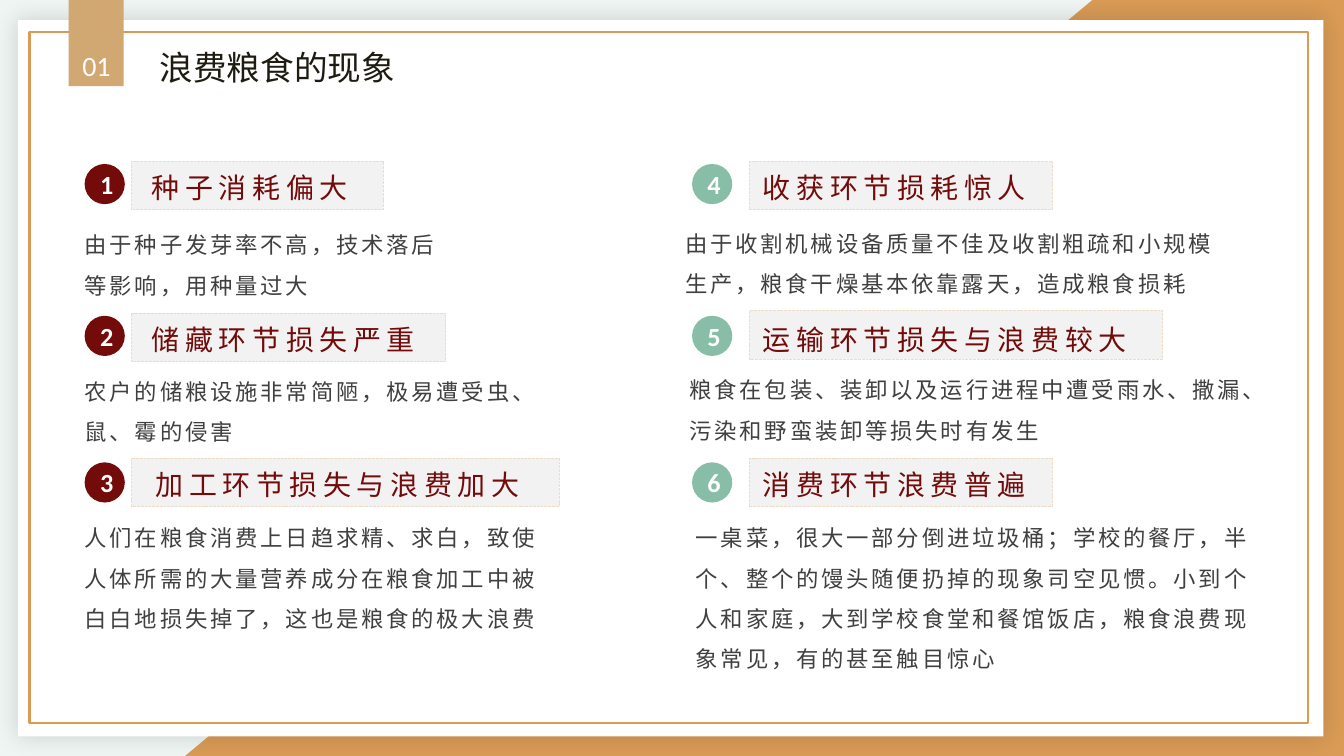
from dataclasses import dataclass

import lxml.etree
import pptx
import pptx.dml.color
import pptx.enum.dml
import pptx.enum.shapes
import pptx.enum.text
import pptx.oxml.ns
import pptx.util

Cm = pptx.util.Cm
Pt = pptx.util.Pt
Kind = pptx.enum.shapes.MSO_SHAPE
Align = pptx.enum.text.PP_ALIGN
Anchor = pptx.enum.text.MSO_ANCHOR
Fit = pptx.enum.text.MSO_AUTO_SIZE
qn = pptx.oxml.ns.qn


@dataclass(frozen=True)
class Theme:
    """Colours, fonts and type sizes."""
    mist: str = "EEF5F3"
    amber: str = "D99B55"
    sand: str = "D1A772"
    cream: str = "EDDCC7"
    white: str = "FFFFFF"
    black: str = "000000"
    pale: str = "F2F2F2"
    wine: str = "730B0B"
    sage: str = "88BEA7"
    ink: str = "1E1C11"
    grey: str = "404040"
    latin: str = "Calibri"
    asian: str = "Noto Sans CJK SC"
    title: int = 18
    head: int = 15
    badge: int = 14
    body: int = 12


@dataclass(frozen=True)
class Entry:
    """A numbered point, with boxes relative to its own corner in cm."""
    head: str
    text: str
    strip: tuple
    body: tuple
    shift: tuple = (0, 0.05)


THEME = Theme()
SLIM = (0.18, 0.1)
WIDE = (0.25, 0.13)
ROWS = (3.1, 5.97, 8.74)
COLUMNS = ((1.6, THEME.wine), (13.08, THEME.sage))
ENTRIES = (
    Entry("种子消耗偏大", "由于种子发芽率不高，技术落后等影响，用种量过大",
          (0.89, -0.05, 4.75, 0.92), (-0.25, 0.89, 7.24, 1.8), (0.13, 0.05)),
    Entry("储藏环节损失严重", "农户的储粮设施非常简陋，极易遭受虫、鼠、霉的侵害",
          (0.89, -0.05, 5.94, 0.92), (-0.25, 0.79, 9.53, 1.8), (0.13, 0.05)),
    Entry("加工环节损失与浪费加大",
          "人们在粮食消费上日趋求精、求白，致使人体所需的大量营养成分在粮食加工中被白白地损失掉了，这也是粮食的极大浪费",
          (0.89, -0.08, 8.08, 0.92), (-0.25, 0.79, 9.53, 2.57), (0.2, 0.05)),
    Entry("收获环节损耗惊人",
          "由于收割机械设备质量不佳及收割粗疏和小规模生产，粮食干燥基本依靠露天，造成粮食损耗",
          (1.09, -0.05, 5.72, 0.92), (-0.38, 0.86, 10.85, 1.8)),
    Entry("运输环节损失与浪费较大",
          "粮食在包装、装卸以及运行进程中遭受雨水、撒漏、污染和野蛮装卸等损失时有发生",
          (1.09, -0.1, 7.8, 0.92), (-0.3, 0.76, 11.23, 1.8), (0, 0.1)),
    Entry("消费环节浪费普遍",
          "一桌菜，很大一部分倒进垃圾桶；学校的餐厅，半个、整个的馒头随便扔掉的现象司空见惯。"
          "小到个人和家庭，大到学校食堂和餐馆饭店，粮食浪费现象常见，有的甚至触目惊心",
          (1.09, -0.08, 5.72, 0.92), (-0.18, 0.79, 11.3, 3.33)),
)


def tint(code):
    """Return a colour from its hex code."""
    return pptx.dml.color.RGBColor.from_string(code)


def place(box, part):
    """Shift a part by the corner of its box."""
    return (box[0] + part[0], box[1] + part[1], *part[2:])


def draw(shapes, kind, box, fill=None, line=None, width=1.25):
    """Add a preset shape without shadow."""
    shape = shapes.add_shape(kind, *map(Cm, box))
    shape.shadow.inherit = False
    if fill:
        shape.fill.solid()
        shape.fill.fore_color.rgb = tint(fill)
    else:
        shape.fill.background()
    if line:
        shape.line.color.rgb = tint(line)
        shape.line.width = Pt(width)
    else:
        shape.line.fill.background()
    return shape


def style(shape, text, size, color, font=THEME.latin, align=Align.LEFT,
          anchor=Anchor.TOP, inset=WIDE, gap=0, bold=False, wrap=True):
    """Set the text of a shape and format it."""
    frame = shape.text_frame
    frame.text = text
    frame.word_wrap = wrap
    frame.vertical_anchor = anchor
    frame.margin_left = frame.margin_right = Cm(inset[0])
    frame.margin_top = frame.margin_bottom = Cm(inset[1])
    line = frame.paragraphs[0]
    line.alignment = align
    run = line.runs[0]
    run.font.size = Pt(size)
    run.font.name = font
    run.font.bold = bold
    run.font.color.rgb = tint(color)
    props = run.font._element
    props.set("spc", str(round(gap * 100)))
    lxml.etree.SubElement(props, qn("a:ea")).set("typeface", THEME.asian)
    return frame


def write(shapes, box, *args, **kwargs):
    """Add a text box with formatted text."""
    return style(shapes.add_textbox(*map(Cm, box)), *args, **kwargs)


def glow(shape):
    """Give a shape a soft, centred shadow."""
    effects = shape._element.spPr.find(qn("a:effectLst"))
    outer = lxml.etree.SubElement(effects, qn("a:outerShdw"), blurRad=str(Pt(12)),
                                  dist="0", dir="0", algn="ctr", rotWithShape="0")
    color = lxml.etree.SubElement(outer, qn("a:srgbClr"), val=THEME.black)
    lxml.etree.SubElement(color, qn("a:alpha"), val="15000")


def backdrop(slide, box):
    """Draw the ground, the corner and the framed card."""
    wide, high = box[2:]
    draw(slide.shapes, Kind.RECTANGLE, box, THEME.mist)
    wedge = draw(slide.shapes, Kind.RIGHT_TRIANGLE,
                 place(box, (3.5, -3.96, wide - 3.5, high + 3.96)), THEME.amber)
    wedge._element.spPr.find(qn("a:xfrm")).set("flipH", "1")
    group = slide.shapes.add_group_shape().shapes
    glow(draw(group, Kind.RECTANGLE, place(box, (0.34, 0.38, 24.67, 13.54)), THEME.white))
    draw(group, Kind.RECTANGLE, place(box, (0.56, 0.61, 24.16, 13.06)), line=THEME.amber)


def header(slide, box):
    """Draw the numbered tab and the title."""
    draw(slide.shapes, Kind.RECTANGLE, place(box, (0, 0, 1.04, 1.63)), THEME.sand)
    write(slide.shapes, place(box, (1.54, 0.79, 6.17, 0.97)), "浪费粮食的现象",
          THEME.title, THEME.ink, font=THEME.asian, align=Align.JUSTIFY,
          anchor=Anchor.MIDDLE, inset=SLIM)
    write(slide.shapes, place(box, (0.07, 0.81, 0.91, 0.84)), "01", THEME.head,
          THEME.white, align=Align.CENTER, inset=SLIM, wrap=False)


def point(slide, box, entry, number, color):
    """Draw one numbered heading with its paragraph."""
    group = slide.shapes.add_group_shape().shapes
    strip = place(box, entry.strip)
    band = draw(group, Kind.RECTANGLE, strip, THEME.pale, THEME.cream, 0.5)
    band.line.dash_style = pptx.enum.dml.MSO_LINE.SQUARE_DOT
    head = write(group, place(strip, (*entry.shift, entry.strip[2], 0.89)), entry.head,
                 THEME.head, THEME.wine, gap=3)
    body = write(slide.shapes, place(box, entry.body), entry.text, THEME.body,
                 THEME.grey, gap=1.5)
    body.paragraphs[0].line_spacing = 1.5
    head.auto_size = body.auto_size = Fit.SHAPE_TO_FIT_TEXT
    badge = draw(slide.shapes, Kind.OVAL, place(box, (0, 0, 0.76, 0.76)), color)
    style(badge, str(number), THEME.badge, THEME.white, align=Align.CENTER,
          anchor=Anchor.MIDDLE, inset=SLIM, bold=True)


def main():
    """Build and save the slide."""
    deck = pptx.Presentation()
    deck.slide_width, deck.slide_height = Cm(25.4), Cm(14.29)
    slide = deck.slides.add_slide(deck.slide_layouts[6])
    backdrop(slide, (0, 0, 25.4, 14.29))
    header(slide, (1.3, 0))
    for index, entry in enumerate(ENTRIES):
        column, row = divmod(index, len(ROWS))
        left, color = COLUMNS[column]
        point(slide, (left, ROWS[row]), entry, index + 1, color)
    deck.save("out.pptx")


if __name__ == "__main__":
    main()
